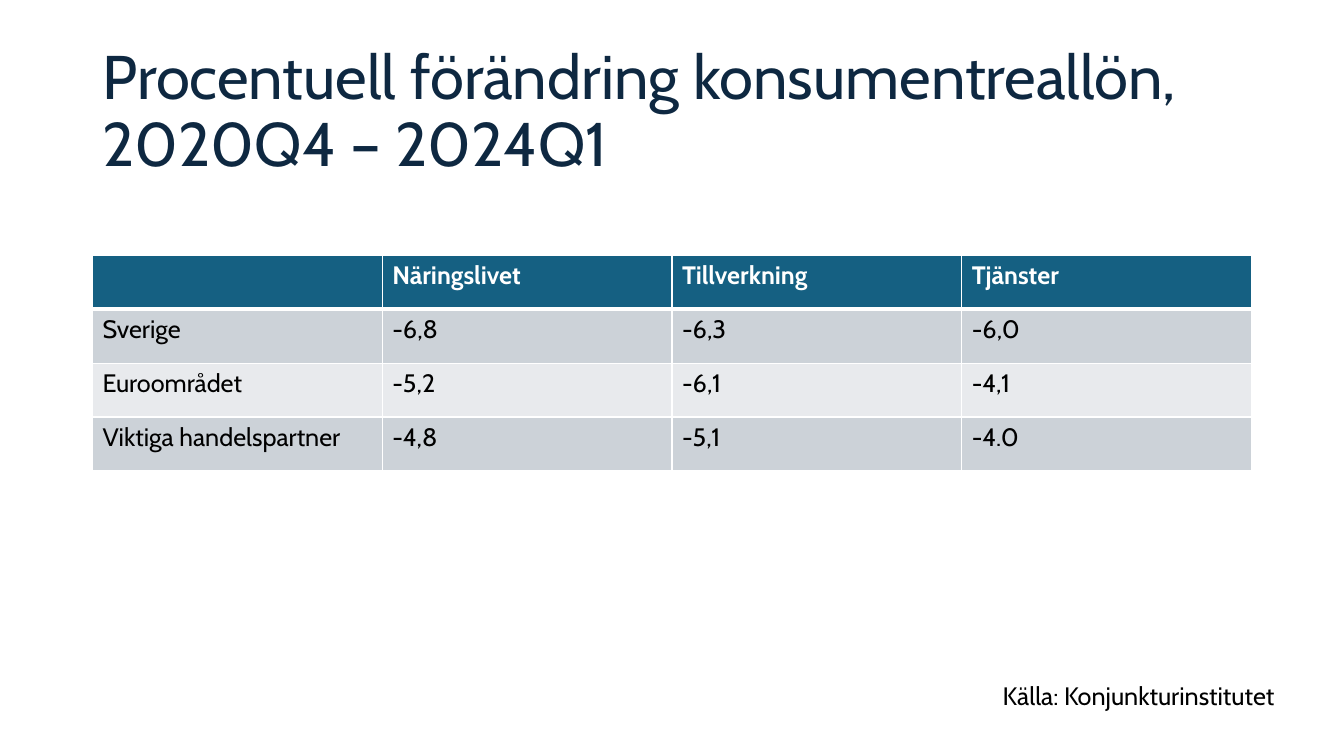
from lxml.etree import SubElement
from pptx import Presentation
from pptx.dml.color import RGBColor
from pptx.enum.text import MSO_ANCHOR as Anchor, MSO_AUTO_SIZE as AutoSize
from pptx.oxml.ns import qn
from pptx.util import Cm, Pt


def style(para, size, color, bold=False):
    para.font.name = "Cabin"
    para.font.size = Pt(size)
    para.font.bold = bold
    para.font.color.rgb = RGBColor.from_string(color)


def add_border(cell, side, width):
    line = SubElement(cell._tc.get_or_add_tcPr(), qn(f"a:ln{side}"), w=str(Pt(width)))
    fill = SubElement(line, qn("a:solidFill"))
    SubElement(fill, qn("a:srgbClr"), val="FFFFFF")


deck = Presentation()
deck.slide_width, deck.slide_height = Cm(33.87), Cm(19.05)
page = deck.slides.add_slide(deck.slide_layouts[6])

# Title
title = page.shapes.add_textbox(Cm(2.33), Cm(1.01), Cm(29.21), Cm(3.68)).text_frame
title.word_wrap = True
title.vertical_anchor = Anchor.MIDDLE
para = title.paragraphs[0]
para.text = "Procentuell förändring konsumentreallön, 2020Q4 – 2024Q1"
para.line_spacing = 0.9
style(para, 44, "0E2841")

# Table of real wage changes
rows = [
    ("", "Näringslivet", "Tillverkning", "Tjänster"),
    ("Sverige", "-6,8", "-6,3", "-6,0"),
    ("Euroområdet", "-5,2", "-6,1", "-4,1"),
    ("Viktiga handelspartner", "-4,8", "-5,1", "-4.0"),
]
row_fills = ["156082", "CCD2D8", "E8EAED", "CCD2D8"]
table = page.shapes.add_table(
    len(rows), len(rows[0]), Cm(2.33), Cm(6.43), Cm(29.21), Cm(5.44)
).table
for r, (texts, row_fill) in enumerate(zip(rows, row_fills)):
    header = r == 0
    # The line under the header is thicker than the others
    borders = {"L": 1, "R": 1, "T": 3 if r == 1 else 1, "B": 3 if header else 1}
    for c, text in enumerate(texts):
        cell = table.cell(r, c)
        for side, width in borders.items():
            add_border(cell, side, width)
        cell.fill.solid()
        cell.fill.fore_color.rgb = RGBColor.from_string(row_fill)
        cell.text = text
        style(cell.text_frame.paragraphs[0], 18, "FFFFFF" if header else "000000", header)

# Source
source = page.shapes.add_textbox(Cm(25.02), Cm(17.02), Cm(7.98), Cm(1.03)).text_frame
source.word_wrap = False
source.auto_size = AutoSize.SHAPE_TO_FIT_TEXT
source.text = "Källa: Konjunkturinstitutet"
style(source.paragraphs[0], 18, "000000")

deck.save("out.pptx")
